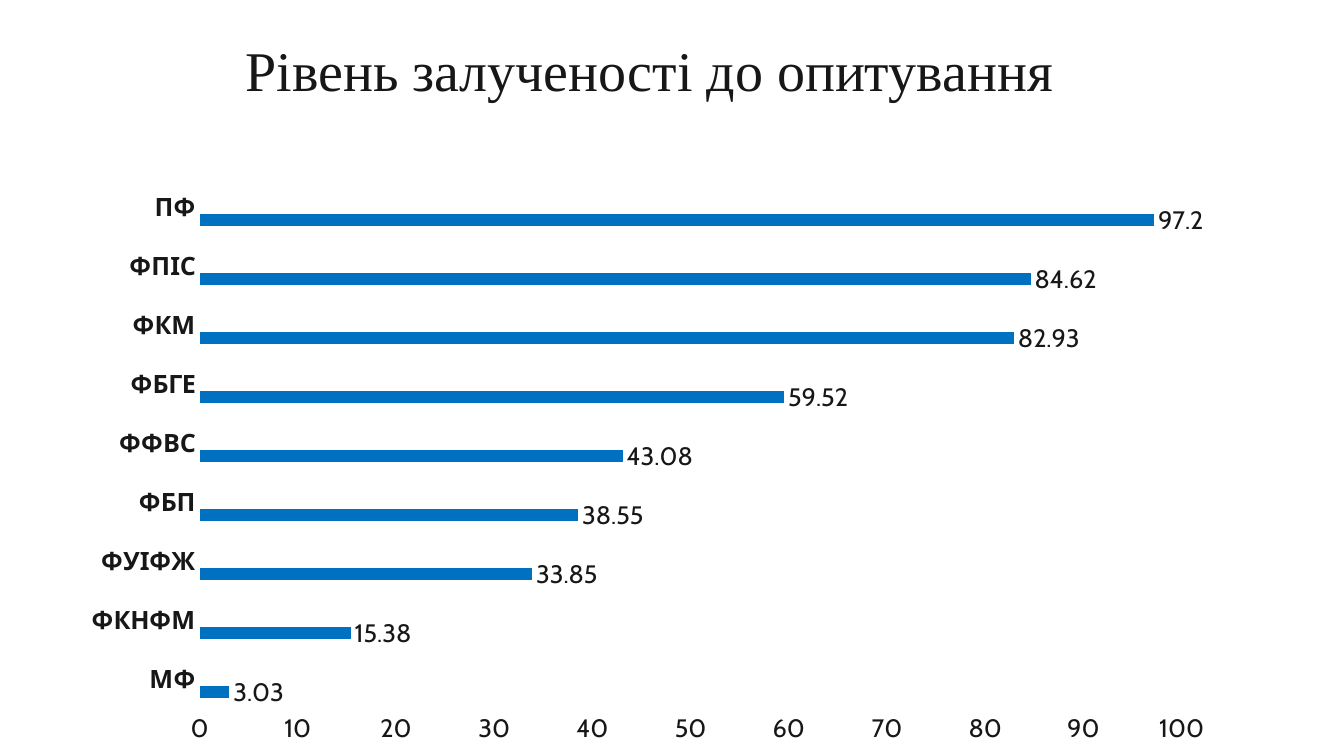
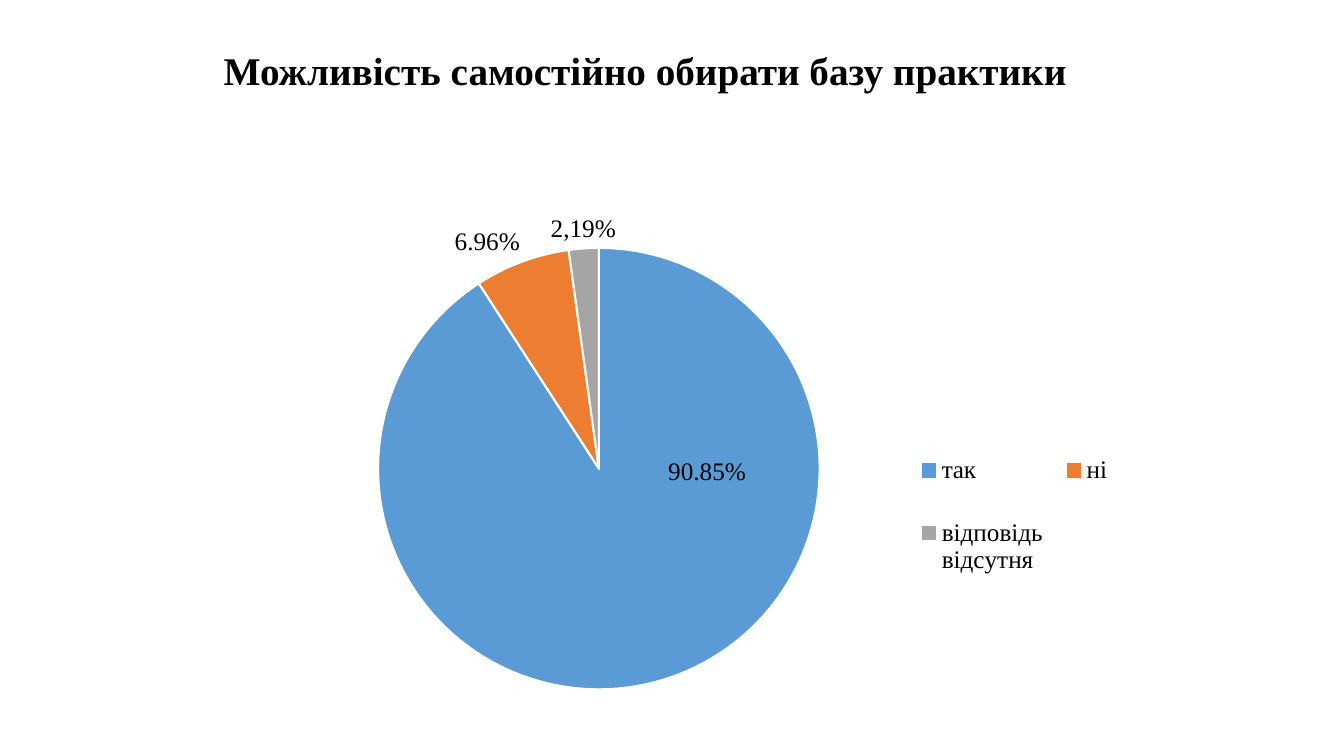
from pptx import Presentation
from pptx.chart.data import CategoryChartData
from pptx.dml.color import RGBColor
from pptx.enum.chart import XL_CHART_TYPE as ChartType
from pptx.enum.chart import XL_LABEL_POSITION as LabelPosition
from pptx.enum.chart import XL_LEGEND_POSITION as LegendPosition
from pptx.enum.chart import XL_TICK_MARK as TickMark
from pptx.enum.text import MSO_ANCHOR as Anchor
from pptx.enum.text import PP_ALIGN as Align
from pptx.oxml import parse_xml
from pptx.oxml.ns import nsdecls, qn
from pptx.util import Inches, Pt

WHITE = RGBColor(0xFF, 0xFF, 0xFF)
BLACK = RGBColor(0x00, 0x00, 0x00)
INK = RGBColor(0x18, 0x17, 0x17)
BAR_COLORS = [RGBColor(0x00, 0x70, 0xC0), RGBColor(0xFF, 0xC0, 0x00),
              RGBColor(0x70, 0xAD, 0x47)]
SLICE_COLORS = [RGBColor(0x5B, 0x9B, 0xD5), RGBColor(0xED, 0x7D, 0x31),
                RGBColor(0xA5, 0xA5, 0xA5)]
SERIF = "Times New Roman"
SANS = "Cabin"
EDGES = dict(xMode="edge", yMode="edge")


def set_font(font, color, **formats):
    for name, value in formats.items():
        setattr(font, name, value)
    font.color.rgb = color


def set_layout(parent, index, chart_size, inches, **modes):
    """Place a chart part, given in inches, as fractions of the chart's size."""
    width, height = chart_size
    fractions = {name: length / (width if name in "xw" else height)
                 for name, length in inches.items()}
    for old in parent.findall(qn("c:layout")):
        parent.remove(old)
    marks = "".join(f'<c:{name} val="{value}"/>'
                    for name, value in {**modes, **fractions}.items())
    parent.insert(index, parse_xml(
        f'<c:layout {nsdecls("c")}><c:manualLayout>{marks}</c:manualLayout></c:layout>'))


deck = Presentation()
deck.slide_width, deck.slide_height = Inches(13.33), Inches(7.5)

# Titles, chart kinds and data of both slides
pages = [
    dict(title="Рівень залученості до опитування", left=1.52, width=9.84,
         align=Align.CENTER, color=INK, font=dict(size=Pt(40), bold=False),
         kind=ChartType.BAR_CLUSTERED, place=(0.69, 1.66, 11.5, 5.84),
         categories=["МФ", "ФКНФМ", "ФУІФЖ", "ФБП", "ФФВС", "ФБГЕ", "ФКМ", "ФПІС", "ПФ"],
         series=[[3.03, 15.38, 33.85, 38.55, 43.08, 59.52, 82.93, 84.62, 97.2],
                 [None] * 9, [None] * 9],
         plot=dict(x=1.29, y=0.11, w=9.74, h=5.27)),
    dict(title="Можливість самостійно обирати базу практики", left=2.12, width=10.67,
         align=Align.LEFT, color=BLACK, font=dict(size=Pt(28), bold=True),
         kind=ChartType.PIE, place=(0.92, 2, 11.5, 5.28),
         categories=["так", "ні", "відповідь відсутня"],
         series=[[90.85, 6.96, 2.19]],
         plot=dict(x=2.83, y=0.46, w=4.38, h=4.38)),
]

charts = []
for content in pages:
    page = deck.slides.add_slide(deck.slide_layouts[6])

    # Title
    box = page.shapes.add_textbox(Inches(content["left"]), 0,
                                  Inches(content["width"]), Inches(1.45))
    frame = box.text_frame
    frame.word_wrap = True
    frame.vertical_anchor = Anchor.MIDDLE
    para = frame.paragraphs[0]
    para.alignment = content["align"]
    para.line_spacing = 0.9
    span = para.add_run()
    span.text = content["title"]
    set_font(span.font, content["color"], name=SERIF, **content["font"])

    # Chart
    data = CategoryChartData()
    data.categories = content["categories"]
    for number, values in enumerate(content["series"], 1):
        data.add_series(f"Series {number}", values)
    place = [Inches(length) for length in content["place"]]
    chart = page.shapes.add_chart(content["kind"], *place, data).chart
    chart.has_title = False
    chart.has_legend = False
    set_font(chart.font, INK, name=SANS, size=Pt(10))
    set_layout(chart.plots[0]._element.getparent(), 0, content["place"][2:],
               content["plot"], layoutTarget="inner", **EDGES)
    charts.append(chart)

bar_chart, pie_chart = charts

# Bars
bars = bar_chart.plots[0]
bars.gap_width = 182
bars.overlap = 0
bars.vary_by_categories = False
for series, color in zip(bars.series, BAR_COLORS):
    series.format.fill.solid()
    series.format.fill.fore_color.rgb = color
labels = bars.series[0].data_labels
labels.show_value = True
labels.number_format = "0.0#"
labels.number_format_is_linked = False
labels.position = LabelPosition.OUTSIDE_END
set_font(labels.font, INK, name=SANS, size=Pt(18))

# Bar axes
for axis, bold in ((bar_chart.category_axis, True), (bar_chart.value_axis, False)):
    axis.major_tick_mark = axis.minor_tick_mark = TickMark.NONE
    set_font(axis.tick_labels.font, INK, name=SANS, size=Pt(18), bold=bold)
scale = bar_chart.value_axis
scale.minimum_scale, scale.maximum_scale, scale.major_unit = 0, 100, 10
scale.format.line.fill.background()
for line in (bar_chart.category_axis.format.line, scale.major_gridlines.format.line):
    line.color.rgb = WHITE
    line.width = Pt(0.75)

# Pie slices and their labels
slices = pie_chart.plots[0].series[0]
labels = slices.data_labels
labels.show_value = True
labels.number_format = "0.00"
labels.number_format_is_linked = False
set_font(labels.font, BLACK, name=SERIF, size=Pt(18))
slice_labels = ["90.85%", "6.96%", "2,19%"]
for index, (color, text) in enumerate(zip(SLICE_COLORS, slice_labels)):
    point = slices.points[index]
    point.format.fill.solid()
    point.format.fill.fore_color.rgb = color
    point.format.line.color.rgb = WHITE
    point.format.line.width = Pt(1.5)
    label = point.data_label
    span = label.text_frame.paragraphs[0].add_run()
    span.text = text
    set_font(span.font, BLACK, name=SERIF, size=Pt(18), bold=False)
    label.position = LabelPosition.BEST_FIT if index == 0 else LabelPosition.OUTSIDE_END
pie_size = pages[1]["place"][2:]
largest_label = labels._element.find(qn("c:dLbl"))
set_layout(largest_label, 1, pie_size, dict(x=0.05, y=-2.26))

# Pie legend
pie_chart.has_legend = True
legend = pie_chart.legend
legend.position = LegendPosition.RIGHT
legend.include_in_layout = False
set_font(legend.font, BLACK, name=SERIF, size=Pt(18))
set_layout(legend._element, 1, pie_size, dict(x=8.07, y=2.18, w=2.14, h=1.87), **EDGES)

deck.save("out.pptx")
